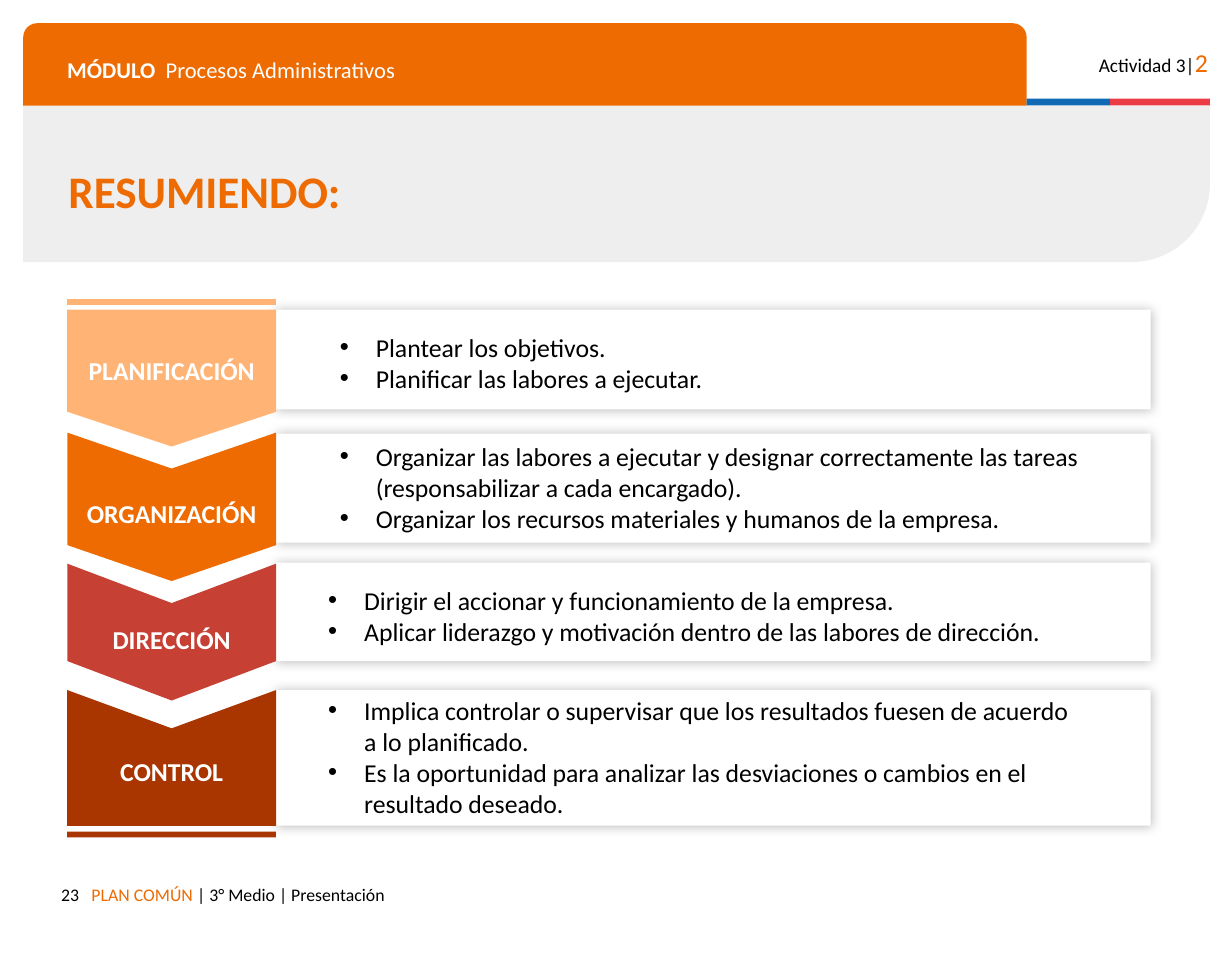
from lxml import etree
from pptx import Presentation
from pptx.dml.color import RGBColor
from pptx.enum.shapes import MSO_SHAPE as SHAPE
from pptx.enum.text import MSO_ANCHOR as ANCHOR, PP_ALIGN as ALIGN
from pptx.oxml import parse_xml
from pptx.oxml.ns import nsdecls, qn
from pptx.util import Inches, Pt

FONT = "Calibri"
COLORS = {
    "orange": "ED6B00", "peach": "FFB375", "red": "C64033", "brown": "A93501",
    "panel": "EEEEEE", "blue": "0F69B4", "crimson": "EB3C46",
    "black": "000000", "white": "FFFFFF",
}
TITLE = "RESUMIENDO:"
ACTIVITY = [("Actividad 3|", 12, "black", False), ("2", 16, "orange", False)]
MODULE = [("MÓDULO", 14, "white", True), ("\tProcesos Administrativos", 14, "white", False)]
PAGE = [("23", 11, "black", False)]
FOOTER = [("PLAN COMÚN ", 11, "orange", False), ("| 3° Medio | Presentación", 11, "black", False)]

# name, colour, stage (top, height, notch depth, tip depth), label top,
# card (top, height), bullet box (left, top, width, height), bullets
STAGES = [
    ("PLANIFICACIÓN", "peach", (2.67, 1.18, 0, 0.3), 3.01, (2.67, 0.86),
     (2.88, 2.81, 5.22, 0.61),
     ["Plantear los objetivos.", "Planificar las labores a ejecutar."]),
    ("ORGANIZACIÓN", "orange", (3.73, 1.28, 0.31, 0.31), 4.24, (3.74, 0.94),
     (2.88, 3.75, 6.64, 0.88),
     ["Organizar las labores a ejecutar y designar correctamente las tareas "
      "(responsabilizar a cada encargado).",
      "Organizar los recursos materiales y humanos de la empresa."]),
    ("DIRECCIÓN", "red", (4.86, 1.18, 0.34, 0.34), 5.33, (4.85, 0.85),
     (2.78, 4.99, 6.54, 0.61),
     ["Dirigir el accionar y funcionamiento de la empresa.",
      "Aplicar liderazgo y motivación dentro de las labores de dirección."]),
    ("CONTROL", "brown", (5.95, 1.17, 0.33, 0), 6.47, (5.95, 1.17),
     (2.78, 5.94, 6.54, 1.16),
     ["Implica controlar o supervisar que los resultados fuesen de acuerdo a lo planificado.",
      "Es la oportunidad para analizar las desviaciones o cambios en el resultado deseado."]),
]
STAGE_LEFT, STAGE_WIDTH = 0.58, 1.8
CARD_LEFT, CARD_WIDTH = STAGE_LEFT + STAGE_WIDTH, 7.54
BAR_HEIGHT, BAR_GAP = 0.05, 0.05

prs = Presentation()
prs.slide_width, prs.slide_height = Inches(10.62), Inches(8.26)
slide = prs.slides.add_slide(prs.slide_layouts[5])
shapes = slide.shapes


def rgb(name):
    return RGBColor.from_string(COLORS[name])


def paint(shape, color):
    shape.shadow.inherit = False
    shape.fill.solid()
    shape.fill.fore_color.rgb = rgb(color)
    shape.line.fill.background()
    return shape


def block(left, top, width, height, color, preset=SHAPE.RECTANGLE, adjust=(), turned=False):
    """Filled preset; a turned one is rotated 90° and still covers the given area."""
    if turned:
        left, top = left + (width - height) / 2, top + (height - width) / 2
        width, height = height, width
    shape = shapes.add_shape(preset, Inches(left), Inches(top), Inches(width), Inches(height))
    for index, value in enumerate(adjust):
        shape.adjustments[index] = value
    if turned:
        shape.rotation = 90
    return paint(shape, color)


def set_frame(frame, inset):
    frame.word_wrap = True
    frame.margin_left = frame.margin_right = Inches(inset)
    frame.margin_top = frame.margin_bottom = Inches(inset)


def style(font, size, color, bold=False):
    font.name, font.size, font.bold = FONT, Pt(size), bold
    font.color.rgb = rgb(color)


def textbox(left, top, width, height, inset=0.1):
    frame = shapes.add_textbox(Inches(left), Inches(top), Inches(width), Inches(height)).text_frame
    set_frame(frame, inset)
    return frame


def write_runs(box, runs, align=ALIGN.LEFT):
    paragraph = textbox(*box).paragraphs[0]
    paragraph.alignment = align
    for text, *look in runs:
        run = paragraph.add_run()
        run.text = text
        style(run.font, *look)
    return paragraph


def add_glow(shape):
    effects = shape._element.spPr.find(qn("a:effectLst"))
    effects.append(parse_xml(
        f'<a:outerShdw {nsdecls("a")} blurRad="{Pt(7)}" dist="0" dir="0" rotWithShape="0">'
        f'<a:srgbClr val="{COLORS["black"]}"><a:alpha val="26000"/></a:srgbClr></a:outerShdw>'))


def stage_arrow(top, height, notch, tip, color):
    if notch and tip:
        ratio = notch / min(height, STAGE_WIDTH)
        block(STAGE_LEFT, top, STAGE_WIDTH, height, color, SHAPE.CHEVRON, [ratio], turned=True)
        return
    right, middle, bottom = CARD_LEFT, STAGE_LEFT + STAGE_WIDTH / 2, top + height
    outline = [(STAGE_LEFT, top), (middle, top + notch), (right, top),
               (right, bottom - tip), (middle, bottom), (STAGE_LEFT, bottom - tip)]
    points = [(Inches(x), Inches(y)) for x, y in outline]
    builder = shapes.build_freeform(*points[0])
    builder.add_line_segments(points[1:], close=True)
    paint(builder.convert_to_shape(), color)


# Header and title panel
block(0.2, 0.91, 10.23, 1.35, "panel", SHAPE.ROUND_1_RECTANGLE, [0.5], turned=True)
block(0.2, 0.2, 8.65, 0.71, "orange", SHAPE.ROUND_2_SAME_RECTANGLE, [0.17, 0])
block(8.85, 0.85, 0.72, 0.06, "blue")
block(9.57, 0.85, 0.86, 0.06, "crimson")
write_runs((9.23, 0.3, 1.28, 0.43), ACTIVITY, ALIGN.RIGHT)
module = write_runs((0.48, 0.38, 8.14, 0.41), MODULE)
tabs = etree.SubElement(module._p.get_or_add_pPr(), qn("a:tabLst"))
etree.SubElement(tabs, qn("a:tab"), pos=str(Inches(0.85)), algn="l")

title = shapes.title
shapes._spTree.append(title._element)  # bring in front of the panel
title.left, title.top, title.width, title.height = map(Inches, (0.49, 1.39, 9.79, 0.59))
set_frame(title.text_frame, 0.1)
title.text_frame.vertical_anchor = ANCHOR.MIDDLE
heading = title.text_frame.paragraphs[0]
heading.text = TITLE
heading.alignment, heading.line_spacing = ALIGN.LEFT, 0.8
style(heading.font, 28, "orange", True)

# Cards behind the stages
for *_, (top, height), _, _ in STAGES:
    add_glow(block(CARD_LEFT, top, CARD_WIDTH, height, "white"))

# Stages with labels and bullets
for name, color, arrow, label_top, _, bullet_box, bullets in STAGES:
    stage_arrow(*arrow, color)
    label = textbox(STAGE_LEFT, label_top, STAGE_WIDTH, 0.33, 0.05).paragraphs[0]
    label.text, label.alignment = name, ALIGN.CENTER
    style(label.font, 16, "white", True)

    frame = textbox(*bullet_box, inset=0.05)
    for index, text in enumerate(bullets):
        item = frame.add_paragraph() if index else frame.paragraphs[0]
        item.text = text
        props = item._p.get_or_add_pPr()
        props.set("marL", str(Inches(0.31)))
        props.set("indent", str(-Inches(0.31)))
        etree.SubElement(props, qn("a:buFont"), typeface="Arial")
        etree.SubElement(props, qn("a:buChar"), char="•")
        style(item.font, 16, "black")

# Bars above the first stage and below the last
first_top = STAGES[0][2][0]
last_top, last_height = STAGES[-1][2][:2]
block(STAGE_LEFT, first_top - BAR_GAP + 0.01 - BAR_HEIGHT, STAGE_WIDTH, BAR_HEIGHT, "peach")
block(STAGE_LEFT, last_top + last_height + BAR_GAP, STAGE_WIDTH, BAR_HEIGHT, "brown")

# Footer
write_runs((0.69, 7.53, 7.14, 0.35), FOOTER)
write_runs((0.41, 7.53, 0.37, 0.35), PAGE, ALIGN.RIGHT)

prs.save("out.pptx")
